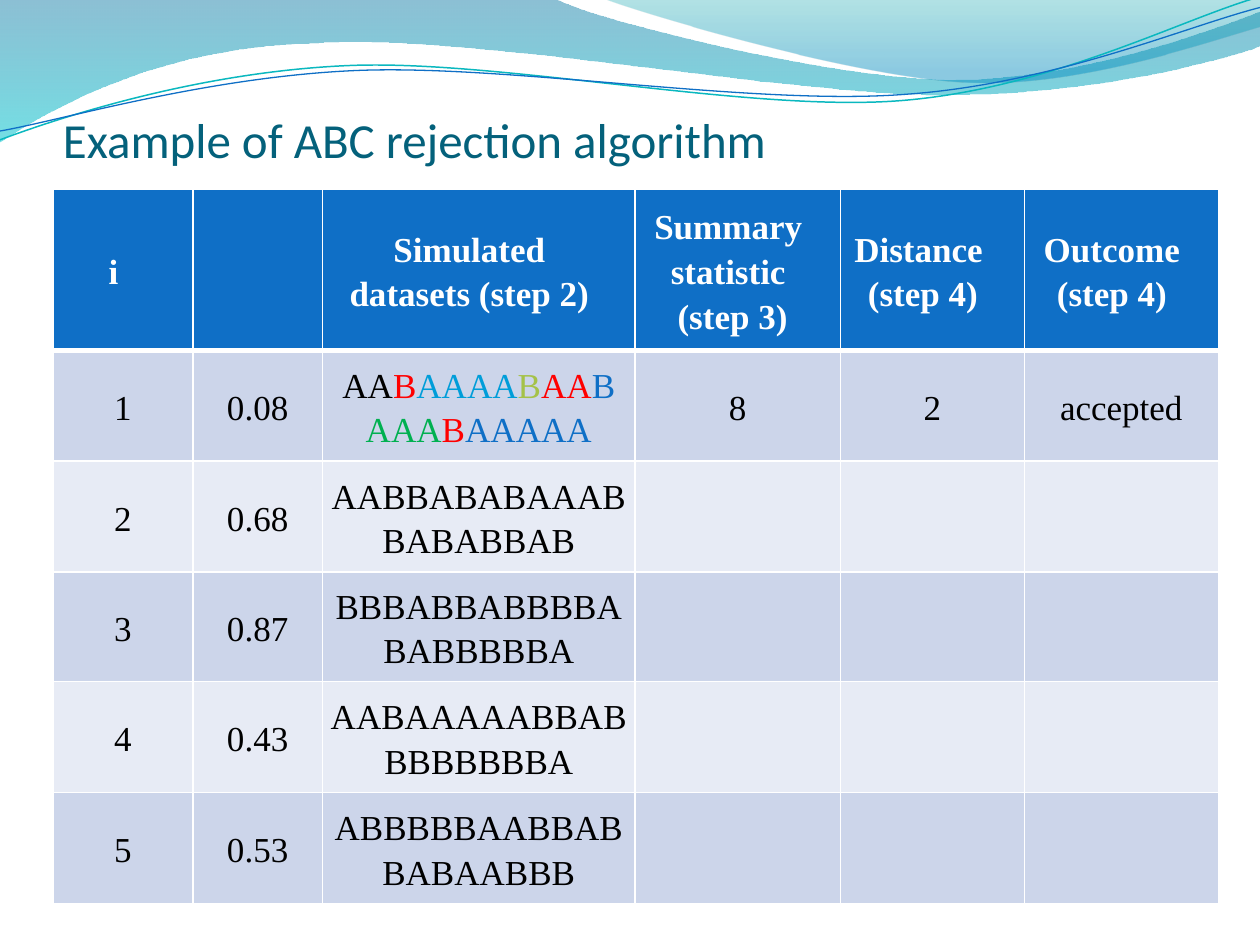
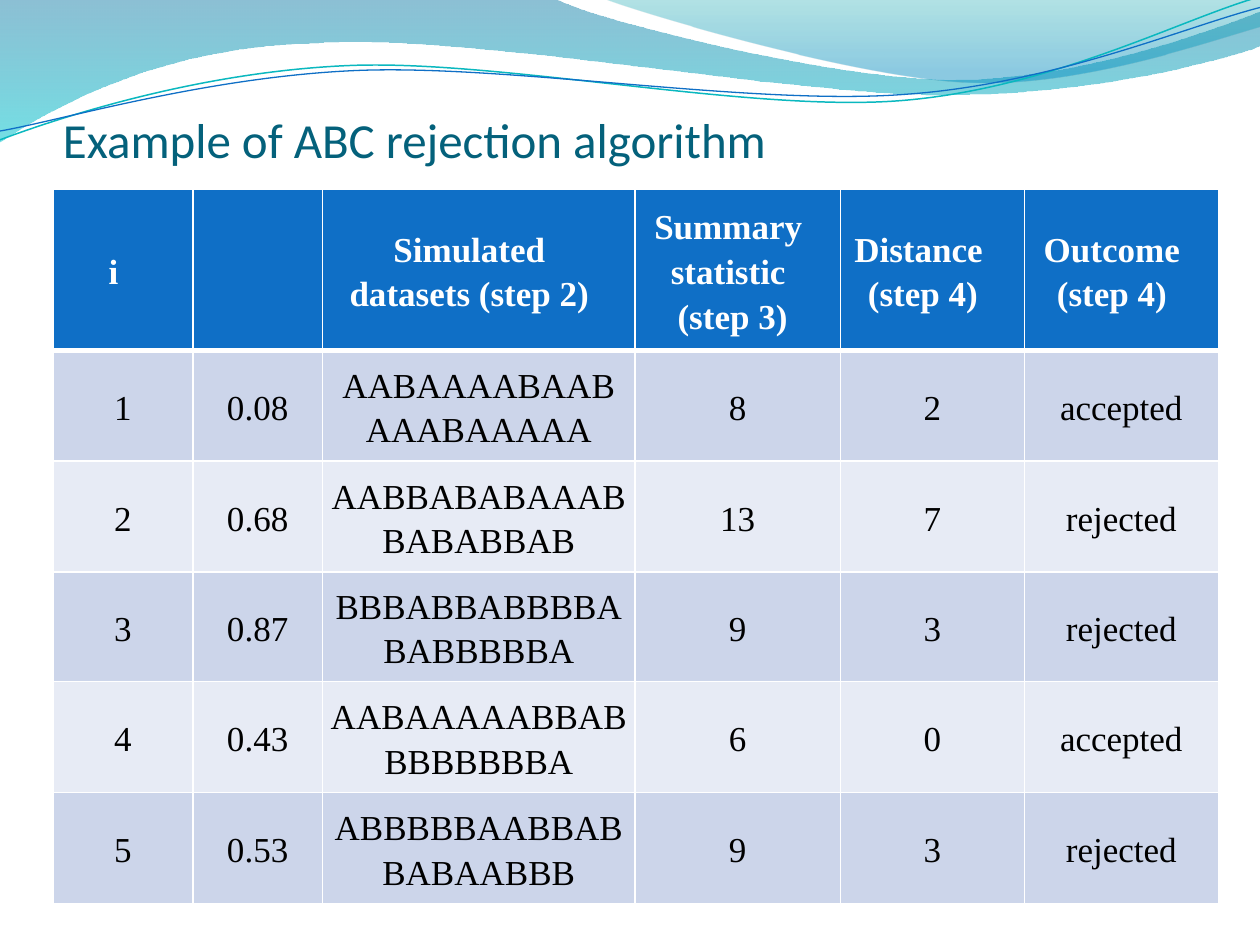
from math import cos, radians, sin

from lxml.etree import SubElement
from pptx import Presentation
from pptx.dml.color import RGBColor
from pptx.enum.text import MSO_ANCHOR, PP_ALIGN
from pptx.oxml.ns import qn
from pptx.util import Inches, Pt

BLUE = "0F6FC6"
WHITE = "FFFFFF"
BLACK = "000000"
RED = "FF0000"
TITLE_COLOUR = "04617B"
ROW_FILLS = ["E7EBF5", "CCD5EA"]

BANDS = [
    {"start": (0, 0),
     "segments": [(4.4, -0.01), (4.76, 0.17, 6.64, 0.63, 7.58, 0.63),
                  (8.53, 0.63, 9.58, 0.26, 10, 0.09), (10.01, 0.36),
                  (9.83, 0.44, 8.7, 0.76, 7.46, 0.75),
                  (6.22, 0.75, 3.82, 0.28, 2.57, 0.34),
                  (1.29, 0.36, 0.46, 0.83, -0.01, 1.13), (0, 0)],
     "stops": [(0, "0074A1", 45), (1, "00C6CF", 55)]},
    {"start": (4.79, -0.01),
     "segments": [(5.09, 0.11, 6.82, 0.62, 7.69, 0.65),
                  (8.56, 0.69, 9.61, 0.32, 10, 0.21), (10, 0), (4.79, -0.01)],
     "stops": [(0, "00A1A9", 30), (0.8, "008BBF", 45)]},
]
WAVE_TILT = -2.7
WAVES = [
    {"start": (0, 1.11),
     "segments": [(0.48, 0.93, 1.58, 0.57, 2.77, 0.52),
                  (3.95, 0.47, 5.93, 0.89, 7.13, 0.8),
                  (8.33, 0.71, 9.38, 0.15, 9.98, -0.02)],
     "centre": (4.99, 0.57), "colour": "0AB8BF", "width": 0.85},
    {"start": (0, 1.04),
     "segments": [(0.47, 0.96, 1.64, 0.61, 2.83, 0.56),
                  (4.03, 0.51, 5.97, 0.84, 7.17, 0.75),
                  (8.36, 0.67, 9.41, 0.21, 10, 0.06)],
     "centre": (5, 0.59), "colour": BLUE, "width": 0.75},
]

COLUMN_WIDTHS = [1.11, 1.03, 2.48, 1.63, 1.46, 1.54]
ROW_HEIGHTS = [1.28, 0.88, 0.88, 0.87, 0.88, 0.88]
HEADINGS = ["i", "", "Simulated datasets (step 2)", "Summary statistic\n (step 3)",
            "Distance \n(step 4)", "Outcome\n(step 4)"]
SIMULATIONS = [
    ["1", "0.08", "AABAAAABAABAAABAAAAA", "8", "2", "accepted"],
    ["2", "0.68", "AABBABABAAABBABABBAB", "13", "7", "rejected"],
    ["3", "0.87", "BBBABBABBBBABABBBBBA", "9", "3", "rejected"],
    ["4", "0.43", "AABAAAAABBABBBBBBBBA", "6", "0", "accepted"],
    ["5", "0.53", "ABBBBBAABBABBABAABBB", "9", "3", "rejected"],
]
COLOURED_DATASET = [("AA", BLACK), ("B", RED), ("AAAA", "009DD9"), ("B", "A5C249"),
                    ("AA", RED), ("B", BLUE), ("AAA", "00B050"), ("B", RED),
                    ("AAAAA", BLUE)]

first_rows = [row[:3] + ["", "", ""] for row in SIMULATIONS]
first_rows[0] = SIMULATIONS[0][:2] + [COLOURED_DATASET] + SIMULATIONS[0][3:]


def rgb(colour):
    return RGBColor.from_string(colour)


def add_outline(page, start, segments, close, tilt=0, centre=(0, 0)):
    points = [start]
    for segment in segments:
        points.extend(zip(segment[::2], segment[1::2]))
    cosine, sine = cos(radians(tilt)), sin(radians(tilt))
    level_points = []
    for x, y in points:
        across, down = x - centre[0], y - centre[1]
        level_points.append((Inches(centre[0] + across * cosine + down * sine),
                             Inches(centre[1] - across * sine + down * cosine)))
    builder = page.shapes.build_freeform(*level_points[0])
    builder.add_line_segments(level_points[1:], close=close)
    outline = builder.convert_to_shape()
    outline.rotation = tilt
    outline.shadow.inherit = False

    lines = outline._element.iter(qn("a:lnTo"))
    lines = iter(list(lines))
    for segment in segments:
        line = next(lines)
        if len(segment) == 6:
            line.tag = qn("a:cubicBezTo")
            for extra in (next(lines), next(lines)):
                line.append(extra[0])
                extra.getparent().remove(extra)
    return outline


deck = Presentation()
deck.slide_width = Inches(10)
deck.slide_height = Inches(7.5)

for simulation_rows in [first_rows, SIMULATIONS]:
    page = deck.slides.add_slide(deck.slide_layouts[6])

    for band in BANDS:
        shape = add_outline(page, band["start"], band["segments"], True)
        shape.line.fill.background()
        shape.fill.gradient()
        shape.fill.gradient_angle = 270
        for stop, (position, colour, opacity) in zip(shape.fill.gradient_stops, band["stops"]):
            stop.position = position
            stop.color.rgb = rgb(colour)
        colour_elements = shape.fill._xPr.iter(qn("a:srgbClr"))
        for element, (position, colour, opacity) in zip(colour_elements, band["stops"]):
            SubElement(element, qn("a:alpha"), val=str(opacity * 1000))

    for wave in WAVES:
        shape = add_outline(page, wave["start"], wave["segments"], False,
                            WAVE_TILT, wave["centre"])
        shape.fill.background()
        shape.line.color.rgb = rgb(wave["colour"])
        shape.line.width = Pt(wave["width"])

    box = page.shapes.add_textbox(Inches(0.5), Inches(0.77), Inches(9), Inches(0.57))
    frame = box.text_frame
    frame.word_wrap = True
    frame.vertical_anchor = MSO_ANCHOR.BOTTOM
    frame.margin_left = frame.margin_right = frame.margin_bottom = 0
    frame.margin_top = Inches(0.05)
    frame.text = "Example of ABC rejection algorithm"
    span = frame.paragraphs[0].runs[0]
    span.font.name = "Calibri"
    span.font.size = Pt(28)
    span.font.color.rgb = rgb(TITLE_COLOUR)

    table = page.shapes.add_table(
        len(ROW_HEIGHTS), len(COLUMN_WIDTHS), Inches(0.42), Inches(1.5),
        Inches(sum(COLUMN_WIDTHS)), Inches(sum(ROW_HEIGHTS))).table
    for column, width in zip(table.columns, COLUMN_WIDTHS):
        column.width = Inches(width)
    for row, height in zip(table.rows, ROW_HEIGHTS):
        row.height = Inches(height)

    for row_index, values in enumerate([HEADINGS] + simulation_rows):
        is_header = row_index == 0
        for column_index, value in enumerate(values):
            cell = table.cell(row_index, column_index)
            cell.vertical_anchor = MSO_ANCHOR.MIDDLE
            cell.margin_left = Inches(0.07 if is_header else 0.06)
            cell.margin_right = Inches(0.22 if is_header else 0.06)
            cell.margin_top = cell.margin_bottom = Inches(0.03)

            properties = cell._tc.get_or_add_tcPr()
            for side in "LRTB":
                thick = (row_index, side) in [(0, "B"), (1, "T")]
                border = SubElement(properties, qn(f"a:ln{side}"), w=str(Pt(3 if thick else 1)))
                SubElement(SubElement(border, qn("a:solidFill")), qn("a:srgbClr"), val=WHITE)
            cell.fill.solid()
            cell.fill.fore_color.rgb = rgb(BLUE if is_header else ROW_FILLS[row_index % 2])

            if not value:
                continue
            para = cell.text_frame.paragraphs[0]
            para.alignment = PP_ALIGN.CENTER
            para.line_spacing = 1.15
            para.space_before = para.space_after = Pt(12)
            if isinstance(value, str):
                para.text = value
                colours = [WHITE if is_header else BLACK] * len(para.runs)
            else:
                colours = [colour for text, colour in value]
                for text, colour in value:
                    para.add_run().text = text
            for span, colour in zip(para.runs, colours):
                span.font.name = "Times New Roman"
                span.font.size = Pt(20)
                span.font.bold = is_header
                span.font.color.rgb = rgb(colour)

deck.save("out.pptx")
